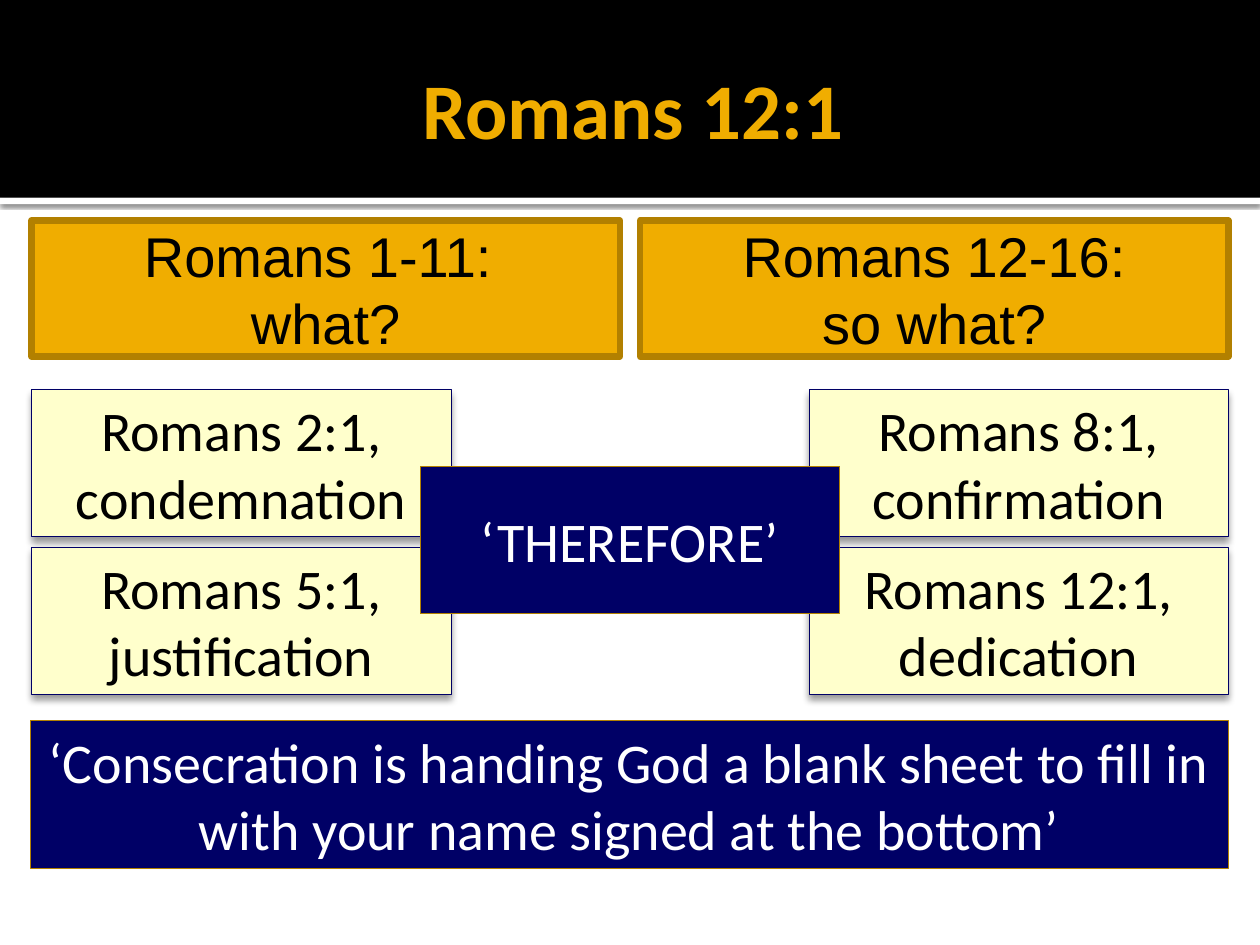
from lxml import etree
from pptx import Presentation
from pptx import util as u
from pptx.dml.color import RGBColor
from pptx.enum import shapes, text
from pptx.oxml.ns import qn

BLACK = RGBColor(0, 0, 0)
WHITE = RGBColor(255, 255, 255)
GOLD = RGBColor(0xF0, 0xAD, 0x00)
BROWN = RGBColor(0xB2, 0x80, 0x00)
CREAM = RGBColor(0xFF, 0xFF, 0xCC)
NAVY = RGBColor(0, 0, 0x66)

# Content: each box is a list of paragraphs, each paragraph a list of lines
TITLE = [["Romans 12:1"]]
HEADS = [
    [["Romans 1-11: "], ["what?"]],
    [["Romans 12-16:", "so what?"]],
]
VERSES = [
    ["Romans 2:1, condemnation", "Romans 5:1, justification"],
    ["Romans 8:1, confirmation", "Romans 12:1, dedication"],
]
LINK = [["‘THEREFORE’"]]
QUOTE = [["‘Consecration is handing God a blank sheet to fill in "
          "with your name signed at the bottom’"]]

# Layout in inches
WIDE, HIGH = 10, 7.5
EDGE = 0.25
BAND = 1.57
HEAD_W, HEAD_H = 4.67, 1.08
CARD_W, CARD_H = 3.33, 1.17
CARD_TOP, CARD_STEP = 3.09, 1.25


def write(shape, paras, color, font="Calibri", size=32, bold=False):
    frame = shape.text_frame
    frame.word_wrap = True
    frame.vertical_anchor = text.MSO_ANCHOR.MIDDLE
    for i, lines in enumerate(paras):
        para = frame.add_paragraph() if i else frame.paragraphs[0]
        para.alignment = text.PP_ALIGN.CENTER
        for j, line in enumerate(lines):
            if j:
                para.add_line_break()
            run = para.add_run()
            run.text = line
            run.font.name = font
            run.font.size = u.Pt(size)
            run.font.bold = bold
            run.font.color.rgb = color


def shade(shape, alpha, blur, dist):
    """Drop a black shadow straight down; alpha in percent, lengths in points."""
    glow = etree.SubElement(
        shape._element.spPr.find(qn("a:effectLst")), qn("a:outerShdw"),
        blurRad=str(u.Pt(blur)), dist=str(u.Pt(dist)), dir="5400000",
        algn="t", rotWithShape="0")
    tint = etree.SubElement(glow, qn("a:srgbClr"), val=str(BLACK))
    etree.SubElement(tint, qn("a:alpha"), val=str(alpha * 1000))


def block(slide, x, y, w, h, fill, line=None, width=0.25):
    shape = slide.shapes.add_shape(
        shapes.MSO_SHAPE.RECTANGLE, *map(u.Inches, (x, y, w, h)))
    shape.shadow.inherit = False
    shape.fill.solid()
    shape.fill.fore_color.rgb = fill
    if line is None:
        shape.line.fill.background()
    else:
        shape.line.color.rgb = line
        shape.line.width = u.Pt(width)
    return shape


def main():
    deck = Presentation()
    deck.slide_width, deck.slide_height = u.Inches(WIDE), u.Inches(HIGH)
    slide = deck.slides.add_slide(deck.slide_layouts[6])

    # Title band with its white rule
    shade(block(slide, 0, BAND, WIDE, 0.05, WHITE), 60, 2.5, 0.8)
    block(slide, 0, 0, WIDE, BAND, BLACK)
    title = slide.shapes.add_textbox(*map(u.Inches, (0.5, 0.17, 9, 1.37)))
    title.text_frame.margin_right = u.Inches(0.05)
    write(title, TITLE, GOLD, size=45, bold=True)

    # Two headings, flush with the side margins
    for x, paras in zip((EDGE, WIDE - EDGE - HEAD_W), HEADS):
        head = block(slide, x, 1.75, HEAD_W, HEAD_H, GOLD, BROWN, 3.78)
        write(head, paras, BLACK, "Arial")

    # Verse cards, two columns of two
    for x, column in zip((EDGE, WIDE - EDGE - CARD_W), VERSES):
        for row, verse in enumerate(column):
            y = CARD_TOP + row * CARD_STEP
            card = block(slide, x, y, CARD_W, CARD_H, CREAM, NAVY)
            shade(card, 40, 4, 3)
            write(card, [[verse]], BLACK)

    # Linking word over the cards, and the closing quote
    link = block(slide, (WIDE - CARD_W) / 2, 3.7, CARD_W, CARD_H, NAVY, BROWN)
    write(link, LINK, WHITE)
    quote = block(slide, 0.24, 5.72, 9.51, CARD_H, NAVY, BROWN)
    write(quote, QUOTE, WHITE)

    deck.save("out.pptx")


if __name__ == "__main__":
    main()
